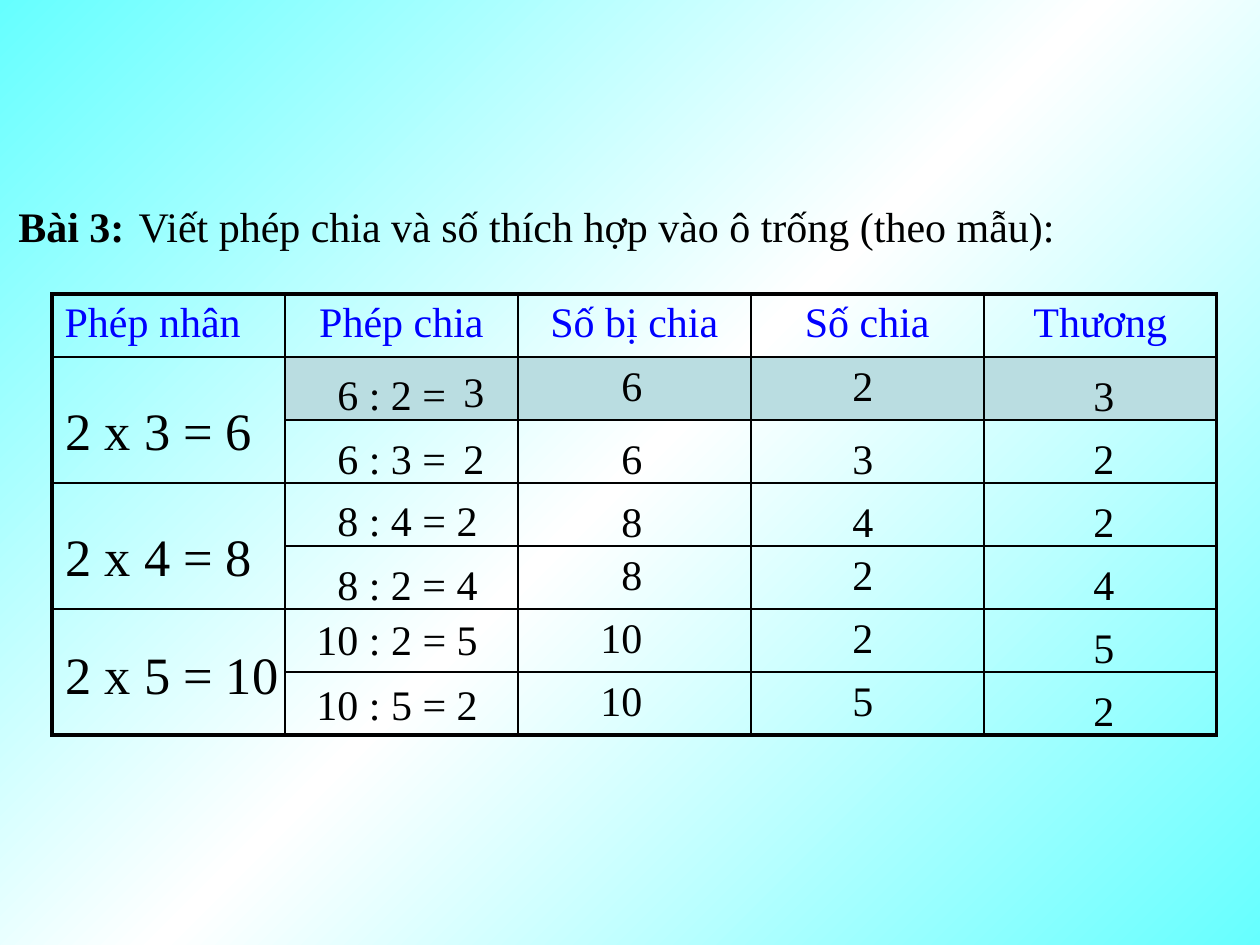
from copy import deepcopy
from dataclasses import dataclass

from lxml.etree import SubElement
from pptx import Presentation
from pptx.dml.color import RGBColor
from pptx.enum.text import MSO_ANCHOR, MSO_AUTO_SIZE, PP_ALIGN
from pptx.oxml.ns import qn
from pptx.util import Emu, Pt

EMU_PER_PX = 914400 / 126


@dataclass(frozen=True)
class Theme:
    font: str = "Times New Roman"
    ink: str = "000000"
    heading: str = "0000FF"
    example_fill: str = "BADDE1"
    edge: str = "66FFFF"
    middle: str = "FFFFFF"
    body_size: int = 24
    product_size: int = 30
    thin: float = 1
    thick: float = 2.25


@dataclass(frozen=True)
class Label:
    text: str
    left: int
    top: int
    width: int = 84
    height: int = 63
    size: int = 24
    bold: bool = False


@dataclass(frozen=True)
class Exercise:
    division: str
    division_top: int
    dividend: int
    divisor: int
    operand_top: int
    quotient: int


THEME = Theme()

# Table grid
TABLE_LEFT, TABLE_TOP = 52, 294
COLUMN_WIDTH, ROW_HEIGHT = 233, 63
HEADINGS = ("Phép nhân", "Phép chia", "Số bị chia", "Số chia", "Thương")

# Answers written over the grid
DIVISION_LEFT, DIVIDEND_LEFT, DIVISOR_LEFT, QUOTIENT_LEFT = 325, 609, 840, 1081
TWO_DIGIT_SHIFT = 21
QUOTIENT_TOP = 363
EXERCISES = (
    Exercise("6 : 2 =", 362, 6, 2, 353, 3),
    Exercise("6 : 3 =", 426, 6, 3, 426, 2),
    Exercise("8 : 4 = 2", 488, 8, 4, 489, 2),
    Exercise("8 : 2 = 4", 552, 8, 2, 542, 4),
    Exercise("10 : 2 = 5", 607, 10, 2, 605, 5),
    Exercise("10 : 5 = 2", 672, 10, 5, 668, 2),
)
PRODUCTS = tuple(
    Label(text, 53, top, 242, 77, THEME.product_size)
    for text, top in (("2 x 3 = 6", 392), ("2 x 4 = 8", 518), ("2 x 5 = 10", 636))
)
SEPARATE_RESULTS = (Label("3", 451, 359), Label("2", 451, 426))
EXERCISE_NUMBER = Label("Bài 3:", 6, 194, 140, bold=True)
INSTRUCTION = Label("Viết phép chia và số thích hợp vào ô trống (theo mẫu):", 126, 194, 987)


def px(length: int) -> Emu:
    return Emu(round(length * EMU_PER_PX))


def format_text(frame, size: int, color: str, align=PP_ALIGN.LEFT, bold: bool = False) -> None:
    paragraph = frame.paragraphs[0]
    paragraph.alignment = align
    for run in paragraph.runs:
        run.font.name = THEME.font
        run.font.size = Pt(size)
        run.font.bold = bold
        run.font.color.rgb = RGBColor.from_string(color)


def place_label(shape, label: Label) -> None:
    shape.left, shape.top = px(label.left), px(label.top)
    shape.width, shape.height = px(label.width), px(label.height)
    frame = shape.text_frame
    frame.text = label.text
    frame.word_wrap = True
    frame.auto_size = MSO_AUTO_SIZE.SHAPE_TO_FIT_TEXT
    frame.vertical_anchor = MSO_ANCHOR.TOP
    format_text(frame, label.size, THEME.ink, bold=label.bold)


def add_label(slide, label: Label) -> None:
    place_label(slide.shapes.add_textbox(0, 0, 0, 0), label)


def paint_background(slide) -> None:
    fill = slide.background.fill
    fill.gradient()
    fill.gradient_angle = 315
    stop_list = slide.element.find(".//" + qn("a:gsLst"))
    stop_list.insert(1, deepcopy(stop_list[0]))
    colors = (THEME.edge, THEME.middle, THEME.edge)
    for stop, position, color in zip(fill.gradient_stops, (0, 0.5, 1), colors):
        stop.position = position
        stop.color.rgb = RGBColor.from_string(color)


def set_borders(cell, outer_sides: dict[str, bool]) -> None:
    properties = cell._tc.get_or_add_tcPr()
    for side, is_outer in outer_sides.items():
        width = THEME.thick if is_outer else THEME.thin
        line = SubElement(properties, qn(f"a:ln{side}"), w=str(Pt(width)))
        solid = SubElement(line, qn("a:solidFill"))
        SubElement(solid, qn("a:srgbClr"), val=THEME.ink)


def add_grid(slide) -> None:
    row_count, column_count = len(EXERCISES) + 1, len(HEADINGS)
    table = slide.shapes.add_table(
        row_count, column_count, px(TABLE_LEFT), px(TABLE_TOP),
        px(COLUMN_WIDTH * column_count), px(ROW_HEIGHT * row_count),
    ).table
    table.first_row = table.horz_banding = False
    for column in table.columns:
        column.width = px(COLUMN_WIDTH)
    for row in table.rows:
        row.height = px(ROW_HEIGHT)

    # Each product covers two divisions
    for top_row in range(1, row_count, 2):
        table.cell(top_row, 0).merge(table.cell(top_row + 1, 0))

    for r in range(row_count):
        for c in range(column_count):
            cell = table.cell(r, c)
            last_row = r + (cell.span_height if cell.is_merge_origin else 1)
            set_borders(cell, {
                "L": c == 0, "R": c == column_count - 1,
                "T": r == 0, "B": last_row == row_count,
            })
            if r == 1 and c > 0:
                cell.fill.solid()
                cell.fill.fore_color.rgb = RGBColor.from_string(THEME.example_fill)
            else:
                cell.fill.background()

    for c, heading in enumerate(HEADINGS):
        frame = table.cell(0, c).text_frame
        frame.text = heading
        align = PP_ALIGN.CENTER if c else PP_ALIGN.LEFT
        format_text(frame, THEME.body_size, THEME.heading, align)


def add_exercise(slide, index: int, exercise: Exercise) -> None:
    shift = TWO_DIGIT_SHIFT if exercise.dividend >= 10 else 0
    quotient_top = QUOTIENT_TOP + index * ROW_HEIGHT
    for label in (
        Label(exercise.division, DIVISION_LEFT - shift, exercise.division_top, 189),
        Label(str(exercise.dividend), DIVIDEND_LEFT - shift, exercise.operand_top),
        Label(str(exercise.divisor), DIVISOR_LEFT, exercise.operand_top),
        Label(str(exercise.quotient), QUOTIENT_LEFT, quotient_top),
    ):
        add_label(slide, label)


def main() -> None:
    deck = Presentation()
    deck.slide_width, deck.slide_height = px(1260), px(945)
    slide = deck.slides.add_slide(deck.slide_layouts[5])
    paint_background(slide)

    # Task wording
    place_label(slide.shapes.title, INSTRUCTION)
    add_label(slide, EXERCISE_NUMBER)

    # Grid and answers
    add_grid(slide)
    for label in PRODUCTS + SEPARATE_RESULTS:
        add_label(slide, label)
    for index, exercise in enumerate(EXERCISES):
        add_exercise(slide, index, exercise)

    deck.save("out.pptx")


if __name__ == "__main__":
    main()
